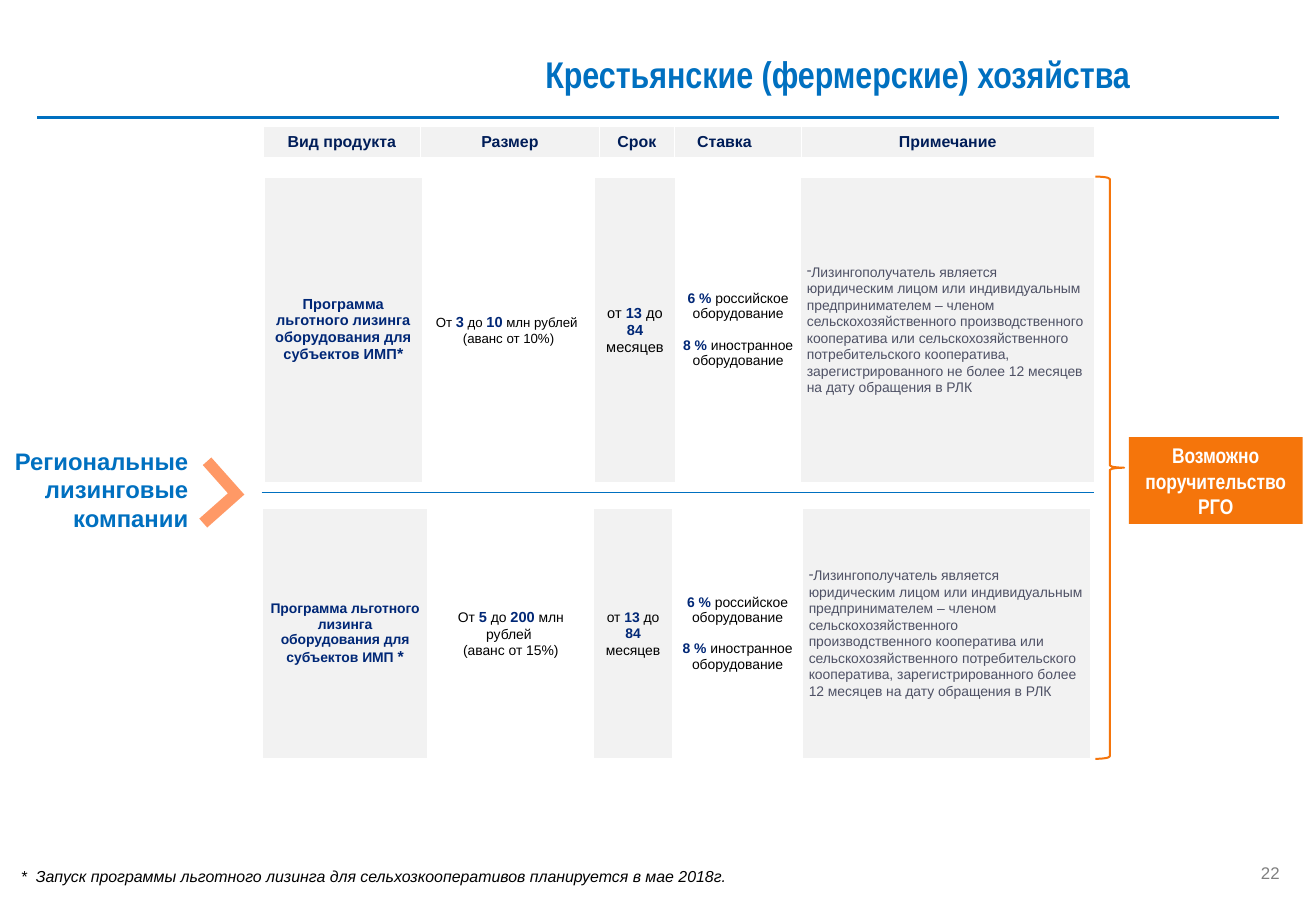
import dataclasses
import itertools
import lxml.etree
import pptx
import pptx.dml.color
import pptx.enum.shapes
import pptx.enum.text
import pptx.oxml.ns
import pptx.util

SHAPES = pptx.enum.shapes.MSO_SHAPE
ALIGN = pptx.enum.text.PP_ALIGN
ANCHOR = pptx.enum.text.MSO_ANCHOR
WIDTH, HEIGHT = pptx.util.Inches(13.78), pptx.util.Inches(9.45)
COLUMN, ROW = WIDTH / 100, HEIGHT / 100


@dataclasses.dataclass(frozen=True)
class Theme:
    font: str = "Arial"
    narrow: str = "Arial Narrow"
    blue: str = "0070C0"
    navy: str = "002776"
    header: str = "001D58"
    note: str = "4E5165"
    black: str = "000000"
    white: str = "FFFFFF"
    gray: str = "808080"
    panel: str = "F2F2F2"
    orange: str = "F5750B"
    peach: str = "FF9966"
    title_size: float = 28
    label_size: float = 18
    badge_size: float = 16
    number_size: float = 12.7
    text_size: float = 12
    large_size: float = 11
    body_size: float = 10.5
    small_size: float = 10


THEME = Theme()


@dataclasses.dataclass(frozen=True)
class Box:
    """A place on a grid of 100 columns by 100 rows that covers the slide."""
    left: float
    top: float
    width: float
    height: float

    def emu(self):
        return (round(self.left * COLUMN), round(self.top * ROW),
                round(self.width * COLUMN), round(self.height * ROW))


def rgb(color):
    return pptx.dml.color.RGBColor.from_string(color)


def add_xml(parent, tag, **attributes):
    return lxml.etree.SubElement(parent, pptx.oxml.ns.qn(tag), attributes)


def fill_with(target, color):
    target.fill.solid()
    target.fill.fore_color.rgb = rgb(color)


def write(frame, *texts, size, color, font=THEME.font, bold=False, italic=False, align=ALIGN.LEFT,
          accent_size=None, spacing=None, gap=0, bullet=None):
    """Write one paragraph per text; parts between bars are accented, newlines break the line."""
    for index, text in enumerate(texts):
        paragraph = frame.add_paragraph() if index else frame.paragraphs[0]
        if bullet:
            properties = paragraph._p.get_or_add_pPr()
            properties.set("marL", "0")
            properties.set("indent", str(pptx.util.Inches(-0.19)))
            add_xml(properties, "a:buChar", char=bullet)
        paragraph.alignment = align
        if spacing:
            paragraph.line_spacing = spacing
        if index and gap:
            paragraph.space_before = pptx.util.Pt(gap)
        for part, accented in zip(text.split("|"), itertools.cycle((False, True))):
            for number, line in enumerate(part.split("\n") if part else ()):
                if number:
                    paragraph.add_line_break()
                run = paragraph.add_run()
                run.text = line
                run.font.name = font
                run.font.size = pptx.util.Pt(accent_size if accented and accent_size else size)
                run.font.bold = bold or accented
                run.font.italic = italic
                run.font.color.rgb = rgb(THEME.navy if accented else color)


def set_margins(target, *margins):
    target.margin_left, target.margin_top, target.margin_right, target.margin_bottom = map(
        pptx.util.Inches, margins)


def add_label(slide, box, *texts, margins=(0.1, 0.05, 0.1, 0.05), anchor=ANCHOR.TOP, **text_format):
    frame = slide.shapes.add_textbox(*box.emu()).text_frame
    frame.word_wrap = True
    frame.vertical_anchor = anchor
    set_margins(frame, *margins)
    write(frame, *texts, **text_format)


def add_rule(slide, left, top, width, weight):
    x, y, length, _ = Box(left, top, width, 0).emu()
    rule = slide.shapes.add_connector(pptx.enum.shapes.MSO_CONNECTOR.STRAIGHT, x, y, x + length, y)
    rule.line.color.rgb = rgb(THEME.blue)
    rule.line.width = pptx.util.Pt(weight)
    add_xml(rule._element.spPr, "a:effectLst")


def add_shape(slide, kind, box):
    shape = slide.shapes.add_shape(kind, *box.emu())
    shape.shadow.inherit = False
    shape.line.fill.background()
    shape.fill.background()
    return shape


def add_row_table(slide, box, weights, filled):
    """Add a one-row table with columns shared by weight and return its cells."""
    table = slide.shapes.add_table(1, len(weights), *box.emu()).table
    table.first_row = table.horz_banding = False
    cells = list(table.iter_cells())
    for index, (cell, weight) in enumerate(zip(cells, weights)):
        table.columns[index].width = round(box.width * COLUMN * weight / sum(weights))
        cell.vertical_anchor = ANCHOR.MIDDLE
        cell.fill.background()
        if index in filled:
            fill_with(cell, THEME.panel)
    return cells


def add_borders(cell, thin):
    for position, side in enumerate(("lnL", "lnR", "lnT", "lnB")):
        weight = pptx.util.Pt(1 if side in thin else 2.25)
        line = lxml.etree.Element(pptx.oxml.ns.qn("a:" + side), w=str(weight))
        add_xml(add_xml(line, "a:solidFill"), "a:srgbClr", val=THEME.white)
        cell._tc.get_or_add_tcPr().insert(position, line)


def heading(slide, box, text):
    title = slide.shapes.title
    title.left, title.top, title.width, title.height = box.emu()
    title.text_frame.auto_size = pptx.enum.text.MSO_AUTO_SIZE.NONE
    title.text_frame.vertical_anchor = ANCHOR.MIDDLE
    write(title.text_frame, text, size=THEME.title_size, color=THEME.blue, font=THEME.narrow, bold=True)
    add_rule(slide, 2.83, 13.02, 94.34, 2.25)


def column_heads(slide, box, *names):
    cells = add_row_table(slide, box, (164, 188, 78, 133, 307), range(5))
    for cell, name in zip(cells, names):
        write(cell.text_frame, name, size=THEME.text_size, color=THEME.header, bold=True,
              align=ALIGN.LEFT if name == "Ставка" else ALIGN.CENTER)
    cells[3].margin_left = pptx.util.Inches(0.24)


def product_row(slide, box, weights, texts, sizes):
    """Fill a row from its name, amount and note; the term and rate are common to all rows."""
    cells = add_row_table(slide, box, weights, (0, 2, 4))
    for cell, thin in zip(cells, ((), (), (), ("lnR",), ("lnL", "lnR"))):
        set_margins(cell, 0.07, 0, 0.07, 0)
        add_borders(cell, thin)
    name, amount, term, rate, note = (cell.text_frame for cell in cells)
    centred = {"color": THEME.black, "align": ALIGN.CENTER}
    write(name, texts[0], size=sizes[0], accent_size=THEME.text_size, bold=True,
          color=THEME.navy, align=ALIGN.CENTER)
    write(amount, texts[1], size=sizes[1], accent_size=THEME.large_size, spacing=1.07, **centred)
    write(term, "от |13| до |84| месяцев", size=sizes[2], spacing=1.07, **centred)
    write(rate, "|6 %| российское оборудование", "|8 %| иностранное оборудование",
          size=THEME.body_size, gap=12, **centred)
    write(note, "Лизингополучатель является юридическим лицом или индивидуальным предпринимателем – "
          "членом сельскохозяйственного производственного кооператива или сельскохозяйственного "
          f"потребительского кооператива, зарегистрированного {texts[2]} 12 месяцев на дату обращения "
          "в РЛК", size=THEME.body_size, color=THEME.note, spacing=1.07, bullet="-")


def lessors(slide, box):
    add_label(slide, box, "Региональные лизинговые", "компании", margins=(0, 0.05, 0.1, 0.05),
              anchor=ANCHOR.MIDDLE, size=THEME.label_size, color=THEME.blue, bold=True, align=ALIGN.RIGHT)
    chevron = add_shape(slide, SHAPES.CORNER, Box(box.width - 1, box.top + 2.75, 3.77, 5.5))
    fill_with(chevron, THEME.peach)
    chevron.adjustments[0], chevron.adjustments[1] = 0.23, 0.24
    chevron.rotation = 228.4


def guarantee(slide, box):
    brace = add_shape(slide, SHAPES.RIGHT_BRACE, Box(box.left, box.top, 2.18, box.height))
    brace.line.color.rgb = rgb(THEME.orange)
    brace.line.width = pptx.util.Pt(1.5)
    badge = add_shape(slide, SHAPES.RECTANGLE, Box(box.left + 2.54, box.top + 28.89, 13.21, 9.63))
    fill_with(badge, THEME.orange)
    badge.text_frame.word_wrap = True
    write(badge.text_frame, "Возможно", "поручительство РГО", size=THEME.badge_size,
          color=THEME.white, font=THEME.narrow, bold=True, align=ALIGN.CENTER)


def footer(slide, box):
    add_label(slide, Box(box.left, box.top, 68.43, box.height),
              "*  Запуск программы льготного лизинга для сельхозкооперативов планируется в мае 2018г.",
              size=THEME.text_size, color=THEME.black, italic=True)
    add_label(slide, Box(box.left + box.width - 3.05, box.top, 3.05, 2.12), "22", margins=(0, 0, 0, 0),
              size=THEME.number_size, color=THEME.gray, align=ALIGN.RIGHT)


def main():
    presentation = pptx.Presentation()
    presentation.slide_width, presentation.slide_height = WIDTH, HEIGHT
    slide = presentation.slides.add_slide(presentation.slide_layouts[5])
    program = "Программа льготного лизинга оборудования для субъектов ИМП"
    heading(slide, Box(40.71, 4.13, 46.73, 8.04), "Крестьянские (фермерские) хозяйства")
    column_heads(slide, Box(20.03, 14.07, 63.13, 3.39),
                 "Вид продукта", "Размер", "Срок", "Ставка", "Примечание")
    product_row(slide, Box(20.03, 19.58, 63.13, 33.97), (167, 179, 86, 130, 308),
                (program + "|*", "От |3| до |10| млн рублей \n(аванс от 10%)", "не более"),
                (THEME.large_size, THEME.small_size, THEME.large_size))
    add_rule(slide, 19.88, 54.6, 63.28, 0.75)
    product_row(slide, Box(19.88, 56.3, 62.99, 27.83), (175, 172, 84, 135, 302),
                (program + " |*", "От |5| до |200| млн рублей \n(аванс от 15%)", "более"),
                (THEME.body_size,) * 3)
    lessors(slide, Box(0, 49.1, 15.02, 10.26))
    guarantee(slide, Box(83.24, 19.58, 15.75, 64.55))
    footer(slide, Box(0.87, 95.6, 96.37, 3.17))
    presentation.save("out.pptx")


if __name__ == "__main__":
    main()
